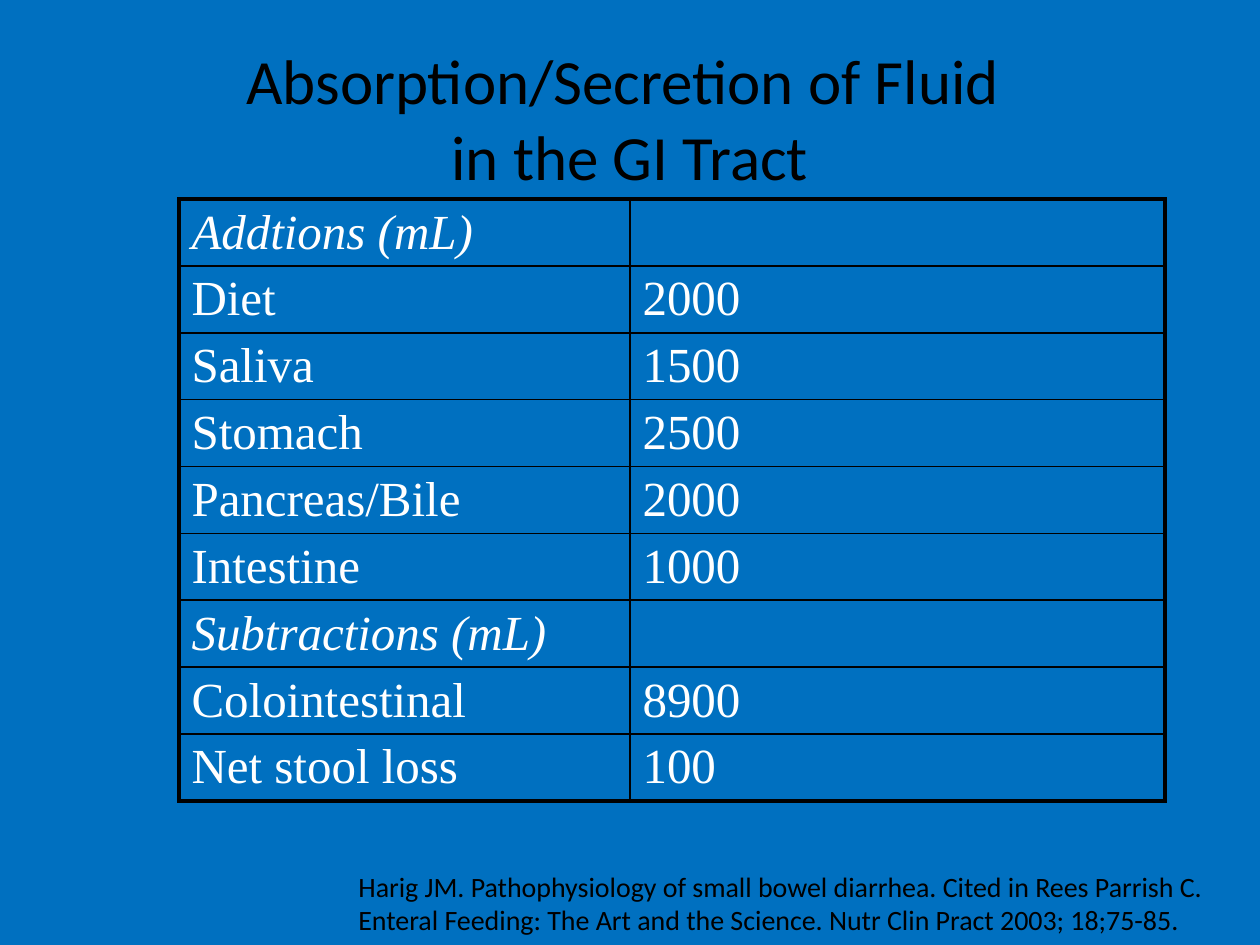
from lxml import etree
from pptx import Presentation
from pptx.dml.color import RGBColor
from pptx.enum.text import MSO_ANCHOR as Anchor, MSO_AUTO_SIZE as AutoSize, PP_ALIGN as Align
from pptx.oxml.ns import qn
from pptx.util import Emu, Pt

BLUE = RGBColor(0x00, 0x70, 0xC0)
BLACK = RGBColor(0x00, 0x00, 0x00)
WHITE = RGBColor(0xFF, 0xFF, 0xFF)

TITLE = "Absorption/Secretion of Fluid \vin the GI Tract"
CITATION = ("Harig JM. Pathophysiology of small bowel diarrhea. Cited in Rees Parrish C. "
            "Enteral Feeding: The Art and the Science. Nutr Clin Pract 2003; 18;75-85.")
FLUIDS = [
    ("Addtions (mL)", ""),
    ("Diet", "2000"),
    ("Saliva", "1500"),
    ("Stomach", "2500"),
    ("Pancreas/Bile", "2000"),
    ("Intestine", "1000"),
    ("Subtractions (mL)", ""),
    ("Colointestinal", "8900"),
    ("Net stool loss", "100"),
]
COLUMN_WIDTHS = (451, 535)
ROW_HEIGHT = 62
OUTER_LINE, INNER_LINE = Pt(2.25), Pt(1)


def px(length):
    return Emu(round(length * 914400 / 126))


def style_font(font, **values):
    color = values.pop("color")
    for name, value in values.items():
        setattr(font, name, value)
    font.color.rgb = color


def add_text(slide, text, box, size, align, anchor, auto_size):
    frame = slide.shapes.add_textbox(*map(px, box)).text_frame
    frame.word_wrap = True
    frame.vertical_anchor = anchor
    frame.auto_size = auto_size
    paragraph = frame.paragraphs[0]
    paragraph.text = text
    paragraph.alignment = align
    style_font(paragraph.font, name="Calibri", size=Pt(size), color=BLACK)
    for run in paragraph.runs:
        style_font(run.font, name="Calibri", size=Pt(size), color=BLACK)


def set_borders(cell, widths):
    properties = cell._tc.get_or_add_tcPr()
    for index, (side, width) in enumerate(widths.items()):
        line = etree.Element(qn(f"a:ln{side}"), w=str(width))
        fill = etree.SubElement(line, qn("a:solidFill"))
        etree.SubElement(fill, qn("a:srgbClr"), val=str(BLACK))
        properties.insert(index, line)


def add_fluid_table(slide, left, top):
    rows, columns = len(FLUIDS), len(COLUMN_WIDTHS)
    table = slide.shapes.add_table(
        rows, columns, px(left), px(top),
        px(sum(COLUMN_WIDTHS)), px(ROW_HEIGHT * rows)).table
    table.first_row = table.horz_banding = False
    for column, width in zip(table.columns, COLUMN_WIDTHS):
        column.width = px(width)

    for r, values in enumerate(FLUIDS):
        table.rows[r].height = px(ROW_HEIGHT)
        is_heading = not values[1]
        for c, value in enumerate(values):
            cell = table.cell(r, c)
            cell.fill.background()
            if value:
                run = cell.text_frame.paragraphs[0].add_run()
                run.text = value
                style_font(run.font, name="Times New Roman", size=Pt(28),
                           italic=is_heading, color=WHITE)
            # Heavy frame outside, thin grid inside
            on_edge = {"L": c == 0, "R": c == columns - 1,
                       "T": r == 0, "B": r == rows - 1}
            set_borders(cell, {side: OUTER_LINE if edge else INNER_LINE
                               for side, edge in on_edge.items()})


def main():
    deck = Presentation()
    deck.slide_width, deck.slide_height = px(1260), px(945)
    slide = deck.slides.add_slide(deck.slide_layouts[6])
    slide.background.fill.solid()
    slide.background.fill.fore_color.rgb = BLUE

    # Title, fluid balance, citation
    add_text(slide, TITLE, (63, 38, 1134, 158), 36, Align.CENTER, Anchor.MIDDLE, AutoSize.NONE)
    add_fluid_table(slide, 179, 199)
    add_text(slide, CITATION, (346, 863, 914, 131), 16, Align.LEFT, Anchor.TOP,
             AutoSize.SHAPE_TO_FIT_TEXT)
    deck.save("out.pptx")


if __name__ == "__main__":
    main()
